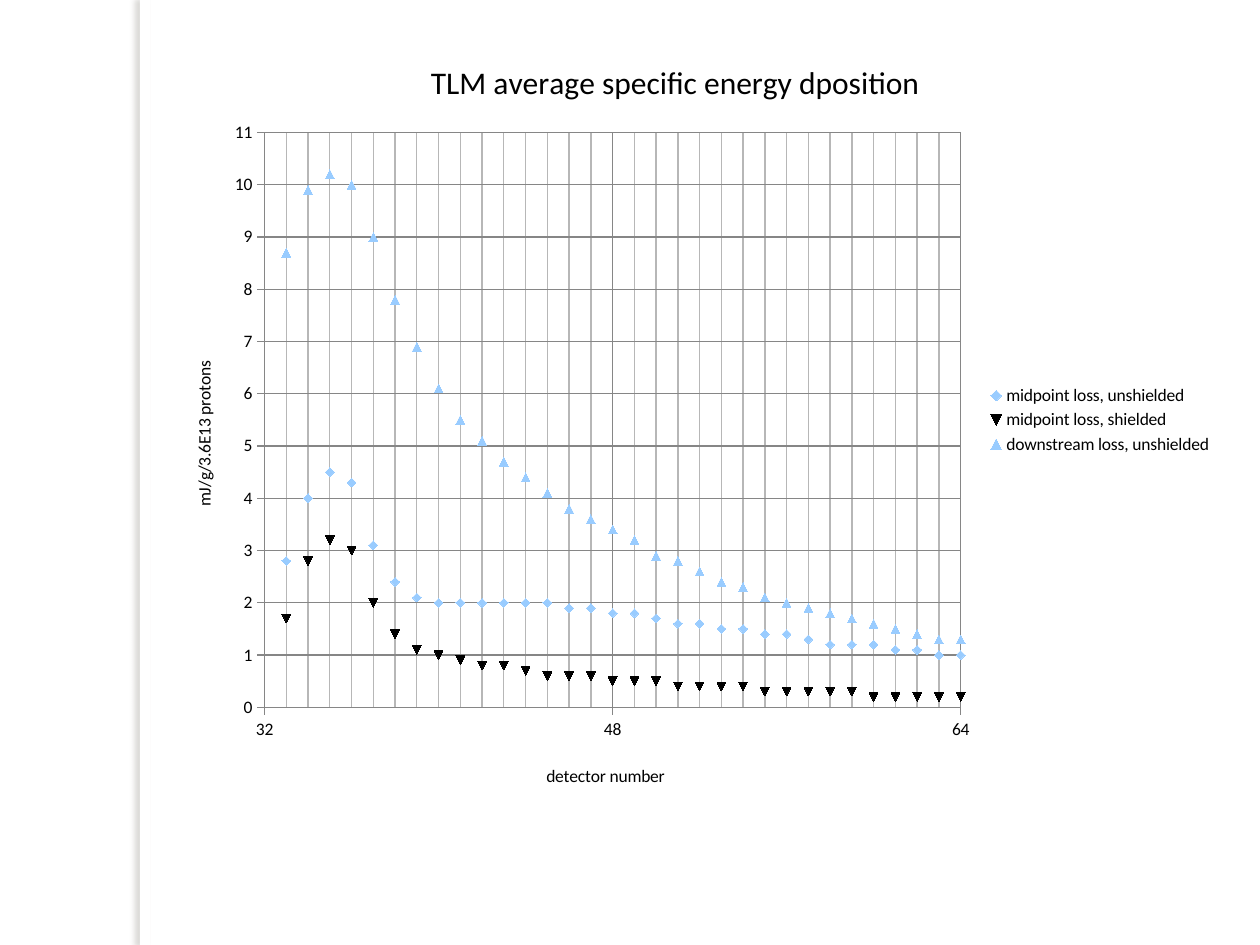
from lxml import etree
from pptx import Presentation
from pptx.chart import data as cd
from pptx.dml.color import RGBColor
from pptx.enum import chart as ec, shapes
from pptx.oxml import parse_xml
from pptx.oxml.ns import qn
from pptx.util import Pt

WHITE = RGBColor(0xFF, 0xFF, 0xFF)
BLACK = RGBColor(0, 0, 0)
SKY = RGBColor(0x99, 0xCC, 0xFF)
GRAY = RGBColor(0x86, 0x86, 0x86)
LIGHT_GRAY = RGBColor(0xB7, 0xB7, 0xB7)
SHADOW = RGBColor(0x73, 0x6F, 0x63)
FONT = "Calibri"
CHART_NS = "http://schemas.openxmlformats.org/drawingml/2006/chart"

FIRST_DETECTOR = 33
SERIES = [
    ("midpoint loss, unshielded", ec.XL_MARKER_STYLE.DIAMOND, SKY,
     [2.8, 4, 4.5, 4.3, 3.1, 2.4, 2.1, 2, 2, 2, 2, 2, 2, 1.9, 1.9, 1.8,
      1.8, 1.7, 1.6, 1.6, 1.5, 1.5, 1.4, 1.4, 1.3, 1.2, 1.2, 1.2, 1.1, 1.1, 1, 1]),
    ("midpoint loss, shielded", ec.XL_MARKER_STYLE.AUTOMATIC, BLACK,
     [1.7, 2.8, 3.2, 3, 2, 1.4, 1.1, 1, 0.9, 0.8, 0.8, 0.7, 0.6, 0.6, 0.6, 0.5,
      0.5, 0.5, 0.4, 0.4, 0.4, 0.4, 0.3, 0.3, 0.3, 0.3, 0.3, 0.2, 0.2, 0.2, 0.2, 0.2]),
    ("downstream loss, unshielded", ec.XL_MARKER_STYLE.TRIANGLE, SKY,
     [8.7, 9.9, 10.2, 10, 9, 7.8, 6.9, 6.1, 5.5, 5.1, 4.7, 4.4, 4.1, 3.8, 3.6, 3.4,
      3.2, 2.9, 2.8, 2.6, 2.4, 2.3, 2.1, 2, 1.9, 1.8, 1.7, 1.6, 1.5, 1.4, 1.3, 1.3]),
]


def set_layout(parent, after=None, inner=False, **place):
    for old in parent.findall(qn("c:layout")):
        parent.remove(old)
    layout = parse_xml(f'<c:layout xmlns:c="{CHART_NS}"><c:manualLayout/></c:layout>')
    items = [("layoutTarget", "inner")] if inner else []
    items += [("xMode", "edge"), ("yMode", "edge")]
    items += [(key, str(value)) for key, value in place.items()]
    for tag, value in items:
        etree.SubElement(layout[0], qn(f"c:{tag}")).set("val", value)
    if after:
        parent.find(qn(after)).addnext(layout)
    else:
        parent.insert(0, layout)


def style_font(font, size):
    font.name = FONT
    font.size = Pt(size)
    font.bold = False
    font.color.rgb = BLACK


def add_title(owner, label, size, x, y):
    title = owner.chart_title if hasattr(owner, "chart_title") else owner.axis_title
    r = title.text_frame.paragraphs[0].add_run()
    r.text = label
    style_font(r.font, size)
    set_layout(title._element, "c:tx", x=x, y=y)


def style_axis(axis, low, high, step):
    axis.minimum_scale, axis.maximum_scale, axis.major_unit = low, high, step
    axis.has_major_gridlines = True
    axis.major_tick_mark = ec.XL_TICK_MARK.CROSS
    axis.minor_tick_mark = ec.XL_TICK_MARK.NONE
    axis.tick_labels.number_format = "General"
    axis.tick_labels.number_format_is_linked = False
    style_font(axis.tick_labels.font, 10)
    for line in (axis.format.line, axis.major_gridlines.format.line):
        line.color.rgb = GRAY
        line.width = Pt(0.75)


def add_minor_gridlines(axis, step):
    axis.minor_unit = step
    axis.has_minor_gridlines = True
    grid = axis._element.find(qn("c:minorGridlines"))
    props = etree.SubElement(grid, qn("c:spPr"))
    line = etree.SubElement(props, qn("a:ln"), w=str(Pt(0.75)))
    fill = etree.SubElement(line, qn("a:solidFill"))
    etree.SubElement(fill, qn("a:srgbClr"), val=str(LIGHT_GRAY))


def add_side_strip(s, left, top, width, height):
    sp = s.shapes.add_shape(shapes.MSO_SHAPE.RECTANGLE, left, top, width, height)
    sp.fill.solid()
    sp.fill.fore_color.rgb = WHITE
    sp.line.fill.background()
    sp.shadow.inherit = False
    effects = sp._element.spPr.find(qn("a:effectLst"))
    shadow = etree.SubElement(effects, qn("a:outerShdw"), blurRad=str(Pt(3)),
                              dist=str(Pt(3)), dir="10800000", rotWithShape="0")
    color = etree.SubElement(shadow, qn("a:srgbClr"), val=str(SHADOW))
    etree.SubElement(color, qn("a:alpha"), val="25000")


def add_energy_chart(s, left, top, width, height):
    data = cd.XyChartData()
    for name, _, _, values in SERIES:
        series = data.add_series(name)
        for detector, value in enumerate(values, FIRST_DETECTOR):
            series.add_data_point(detector, value)
    chart = s.shapes.add_chart(ec.XL_CHART_TYPE.XY_SCATTER, left, top,
                               width, height, data).chart
    style_font(chart.font, 10)
    plot = chart.plots[0]
    plot.vary_by_categories = False
    for series, (_, marker, color, _) in zip(plot.series, SERIES):
        series.smooth = False
        series.format.line.fill.background()
        series.marker.style = marker
        series.marker.size = 5
        series.marker.format.fill.solid()
        series.marker.format.fill.fore_color.rgb = color
        series.marker.format.line.color.rgb = color

    x_axis, y_axis = chart.category_axis, chart.value_axis
    style_axis(x_axis, 32, 64, 16)
    style_axis(y_axis, 0, 11, 1)
    add_minor_gridlines(x_axis, 1)

    add_title(chart, "TLM average specific energy dposition", 18, 0.25, 0.03)
    add_title(x_axis, "detector number", 10, 0.36, 0.94)
    add_title(y_axis, "mJ/g/3.6E13 protons", 10, 0.03, 0.42)

    chart.has_legend = True
    chart.legend.position = ec.XL_LEGEND_POSITION.RIGHT
    chart.legend.include_in_layout = False
    style_font(chart.legend.font, 10)
    set_layout(chart.legend._element, "c:legendPos", x=0.77, y=0.45, w=0.22, h=0.1)
    plot_area = chart._chartSpace.find(f".//{qn('c:plotArea')}")
    set_layout(plot_area, inner=True, x=0.1, y=0.13, w=0.65, h=0.74)


def main():
    prs = Presentation()
    prs.slide_width, prs.slide_height = Pt(720), Pt(540)
    s = prs.slides.add_slide(prs.slide_layouts[6])
    add_side_strip(s, Pt(80), Pt(0), Pt(6), Pt(540))
    add_energy_chart(s, Pt(90), Pt(18), Pt(612), Pt(444))
    prs.save("out.pptx")


if __name__ == "__main__":
    main()
